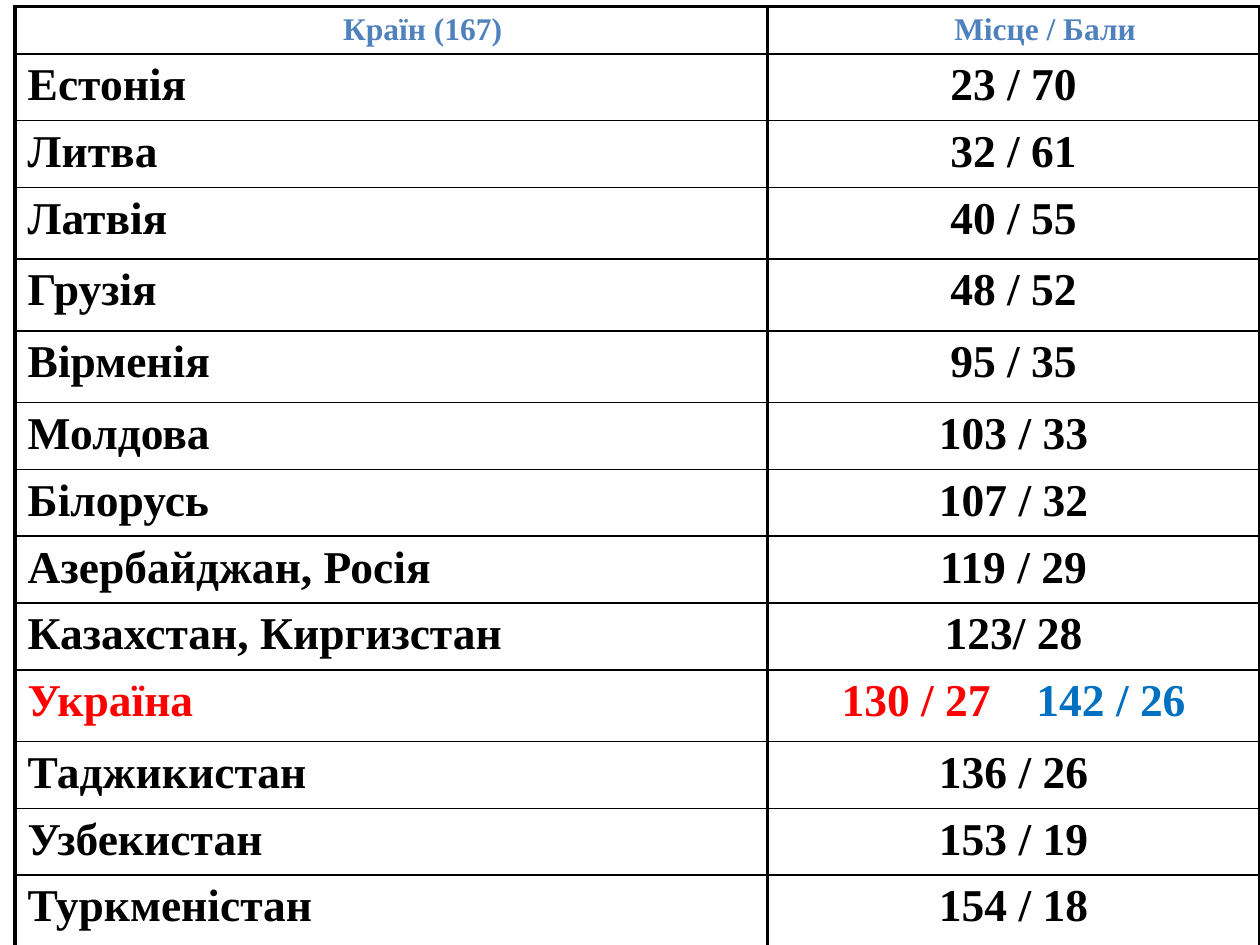
from dataclasses import dataclass

from lxml import etree
from pptx import Presentation
from pptx import util as u
from pptx.dml import color
from pptx.enum import text
from pptx.oxml import ns


@dataclass(frozen=True)
class Theme:
    """Colours, font and sizes of the ranking table."""
    font: str = "Times New Roman"
    header: str = "4F81BD"
    body: str = "000000"
    accent: str = "FF0000"
    update: str = "0070C0"
    border: str = "000000"
    header_size: int = 18
    body_size: int = 26
    thick: float = 2.25
    thin: float = 1
    gap: float = 19.5


THEME = Theme()
HEADER = ("Країн (167)", "Місце / Бали")
HIGHLIGHT = "Україна"
UPDATED_SCORE = "142 / 26"
COLUMN_WIDTHS = (5.97, 3.91)
COUNTRIES = (
    ("Естонія", "23 / 70", 0.53),
    ("Литва", "32 / 61", 0.53),
    ("Латвія", "40 / 55", 0.57),
    ("Грузія", "48 / 52", 0.57),
    ("Вірменія", "95 / 35", 0.57),
    ("Молдова", "103 / 33", 0.53),
    ("Білорусь", "107 / 32", 0.53),
    ("Азербайджан, Росія", "119 / 29", 0.53),
    ("Казахстан, Киргизстан", "123/ 28", 0.53),
    (HIGHLIGHT, "130 / 27", 0.57),
    ("Таджикистан", "136 / 26", 0.53),
    ("Узбекистан", "153 / 19", 0.53),
    ("Туркменістан", "154 / 18", 0.57 + 0.06),
)


def style_span(span, size, colour):
    """Set the font of one run."""
    span.font.name = THEME.font
    span.font.size = u.Pt(size)
    span.font.bold = True
    span.font.color.rgb = color.RGBColor.from_string(colour)


def set_borders(cell, top, bottom):
    """Draw the four edges of a cell, with thick sides."""
    properties = cell._tc.get_or_add_tcPr()
    edges = {"L": THEME.thick, "R": THEME.thick, "T": top, "B": bottom}
    for place, (edge, width) in enumerate(edges.items()):
        line = etree.Element(ns.qn(f"a:ln{edge}"), w=str(u.Pt(width)))
        fill = etree.SubElement(line, ns.qn("a:solidFill"))
        etree.SubElement(fill, ns.qn("a:srgbClr"), val=THEME.border)
        properties.insert(place, line)


def fill_cell(cell, words, size, colour, align, indent):
    """Write one formatted paragraph in an unfilled cell."""
    cell.fill.background()
    cell.text_frame.text = words
    para = cell.text_frame.paragraphs[0]
    para.alignment = align
    layout = para._p.get_or_add_pPr()
    layout.set("marL", str(u.Inches(0.38)))
    layout.set("indent", str(u.Inches(indent)))
    style_span(para.runs[0], size, colour)
    return para


def add_updated_score(para):
    """Append the second score after a widened space."""
    for words, colour in ((" ", THEME.accent), (UPDATED_SCORE, THEME.update)):
        span = para.add_run()
        span.text = words
        style_span(span, THEME.body_size, colour)
    para.runs[1]._r.get_or_add_rPr().set("spc", str(round(THEME.gap * 100)))


def add_ranking(page):
    """Add the table of countries with place and score."""
    heights = [0.25] + [height for *_, height in COUNTRIES]
    table = page.shapes.add_table(
        len(heights), len(COLUMN_WIDTHS), u.Inches(0.12), u.Inches(0.05),
        u.Inches(sum(COLUMN_WIDTHS)), u.Inches(sum(heights))).table
    table.first_row = table.horz_banding = False
    for column, width in zip(table.columns, COLUMN_WIDTHS):
        column.width = u.Inches(width)
    for row, height in zip(table.rows, heights):
        row.height = u.Inches(height)

    center, justify = text.PP_ALIGN.CENTER, text.PP_ALIGN.JUSTIFY
    for cell, words in zip(table.rows[0].cells, HEADER):
        fill_cell(cell, words, THEME.header_size, THEME.header, center, 0.12)
    for index, (country, score, _) in enumerate(COUNTRIES, 1):
        colour = THEME.accent if country == HIGHLIGHT else THEME.body
        fill_cell(table.cell(index, 0), country, THEME.body_size, colour, justify, -0.38)
        para = fill_cell(table.cell(index, 1), score, THEME.body_size, colour, center, -0.38)
        if country == HIGHLIGHT:
            add_updated_score(para)

    last = len(heights) - 1
    for index, row in enumerate(table.rows):
        for cell in row.cells:
            set_borders(cell, THEME.thick if index == 0 else THEME.thin,
                        THEME.thick if index == last else THEME.thin)


def main():
    """Build and save the one-page deck."""
    deck = Presentation()
    deck.slide_width, deck.slide_height = u.Inches(10), u.Inches(7.5)
    page = deck.slides.add_slide(deck.slide_layouts[6])
    add_ranking(page)
    deck.save("out.pptx")


if __name__ == "__main__":
    main()
